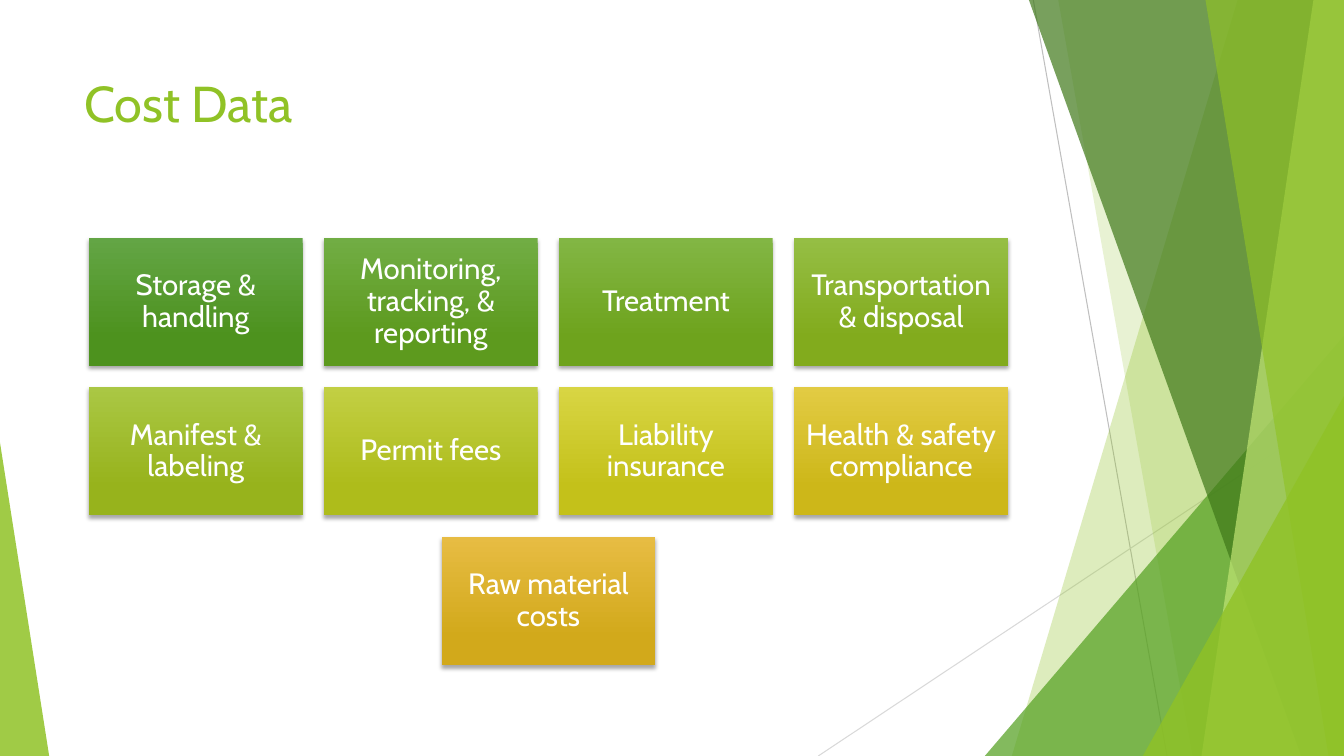
from lxml import etree
from pptx import Presentation
from pptx import util as u
from pptx.dml.color import RGBColor
from pptx.enum import shapes, text
from pptx.oxml.ns import qn

FONT = "Cabin"
GREEN = "90C226"
WHITE = "FFFFFF"
SLIDE_WIDTH, SLIDE_HEIGHT = 33.87, 19.05

CARDS = [
    [("Storage & handling", "63A545", "4D921E"),
     ("Monitoring, tracking, & reporting", "71AD44", "5D9A1E"),
     ("Treatment", "82B644", "6EA31D"),
     ("Transportation & disposal", "95BE44", "82AB1D")],
    [("Manifest & labeling", "AAC744", "97B31C"),
     ("Permit fees", "C2CF43", "AEBC1B"),
     ("Liability insurance", "D8D543", "C4C11A"),
     ("Health & safety compliance", "E2CB43", "CDB719")],
    [("Raw material costs", "E7BC43", "D2A91B")],
]

# Back to front: kind, first x, second x (beam) or top y (triangle), colour, opacity
FACETS = [
    ("beam", 10.57, 4.88, GREEN, 30),
    ("beam", 6.05, 9.43, GREEN, 20),
    ("triangle", 4.2, 8.46, "54A021", 72),
    ("beam", 5.31, 12.17, "3F7819", 70),
    ("beam", 12.48, 9.66, "C0E474", 70),
    ("beam", 9.76, 12.86, GREEN, 65),
    ("triangle", 8.18, 9.98, GREEN, 80),
]


def rgb(value):
    return RGBColor.from_string(value)


def add_alpha(color_element, opacity):
    etree.SubElement(color_element, qn("a:alpha"), val=str(opacity * 1000))


def style_facet(shape, color, opacity):
    shape.shadow.inherit = False
    shape.fill.solid()
    shape.fill.fore_color.rgb = rgb(color)
    add_alpha(next(shape._element.spPr.iter(qn("a:srgbClr"))), opacity)
    shape.line.fill.background()


def add_triangle(slide, left, top, width, height, apex, color, opacity):
    shape = slide.shapes.add_shape(
        shapes.MSO_SHAPE.ISOSCELES_TRIANGLE,
        u.Cm(left), u.Cm(top), u.Cm(width), u.Cm(height))
    shape.adjustments[0] = apex
    style_facet(shape, color, opacity)


def add_beam(slide, points, color, opacity):
    start, *others = [(u.Cm(x), u.Cm(y)) for x, y in points]
    builder = slide.shapes.build_freeform(*start)
    builder.add_line_segments(others, close=True)
    style_facet(builder.convert_to_shape(), color, opacity)


def add_hairline(slide, start, end, color):
    line = slide.shapes.add_connector(
        shapes.MSO_CONNECTOR.STRAIGHT, *[u.Cm(value) for value in (*start, *end)])
    line.line.color.rgb = rgb(color)
    line.line.width = u.Pt(0.75)
    etree.SubElement(line._element.spPr, qn("a:effectLst"))


def add_facets(slide, left, top, width, height):
    """Overlapping translucent panels along the right edge."""
    right, bottom = left + width, top + height
    add_hairline(slide, (left + 5.42, top), (left + 8.79, bottom), "BFBFBF")
    add_hairline(slide, (right, top + 10.24), (left, bottom), "D9D9D9")
    for kind, first, second, color, opacity in FACETS:
        if kind == "beam":
            points = [(left + first, top), (right, top),
                      (right, bottom), (left + second, bottom)]
            add_beam(slide, points, color, opacity)
        else:
            add_triangle(slide, left + first, top + second,
                         width - first, height - second, 1, color, opacity)


def add_title(slide, left, top, width, height, wording):
    box = slide.shapes.add_textbox(u.Cm(left), u.Cm(top), u.Cm(width), u.Cm(height))
    frame = box.text_frame
    frame.word_wrap = True
    frame.vertical_anchor = text.MSO_ANCHOR.TOP
    paragraph = frame.paragraphs[0]
    paragraph.text = wording
    paragraph.font.name = FONT
    paragraph.font.size = u.Pt(36)
    paragraph.font.color.rgb = rgb(GREEN)


def add_card(slide, left, top, width, height, wording, light, dark):
    card = slide.shapes.add_shape(
        shapes.MSO_SHAPE.RECTANGLE, u.Cm(left), u.Cm(top), u.Cm(width), u.Cm(height))
    card.line.fill.background()

    # Gradient from light at the top to dark near the bottom
    card.fill.gradient()
    card.fill.gradient_angle = 270
    for stop, color, position in zip(card.fill.gradient_stops, (light, dark), (0, 0.78)):
        stop.color.rgb = rgb(color)
        stop.position = position

    # Soft shadow below
    card.shadow.inherit = False
    effects = card._element.spPr.find(qn("a:effectLst"))
    shadow = etree.SubElement(
        effects, qn("a:outerShdw"), blurRad=str(u.Pt(3)), dist=str(u.Pt(2)),
        dir="5400000", rotWithShape="0")
    add_alpha(etree.SubElement(shadow, qn("a:srgbClr"), val="000000"), 35)

    # Label
    frame = card.text_frame
    frame.word_wrap = True
    frame.vertical_anchor = text.MSO_ANCHOR.MIDDLE
    frame.margin_left = frame.margin_right = u.Cm(0.22)
    frame.margin_top = frame.margin_bottom = u.Cm(0.22)
    paragraph = frame.paragraphs[0]
    paragraph.text = wording
    paragraph.alignment = text.PP_ALIGN.CENTER
    paragraph.line_spacing = 0.9
    paragraph.font.name = FONT
    paragraph.font.size = u.Pt(21)
    paragraph.font.color.rgb = rgb(WHITE)


def add_card_grid(slide, left, top, width, height, gap=0.54):
    """Rows of equal cards; a shorter row is centred."""
    columns = max(len(row) for row in CARDS)
    card_width = (width - gap * (columns - 1)) / columns
    card_height = (height - gap * (len(CARDS) - 1)) / len(CARDS)
    for row_index, row in enumerate(CARDS):
        indent = (columns - len(row)) * (card_width + gap) / 2
        for column, card in enumerate(row):
            add_card(slide, left + indent + column * (card_width + gap),
                     top + row_index * (card_height + gap),
                     card_width, card_height, *card)


def main():
    presentation = Presentation()
    presentation.slide_width = u.Cm(SLIDE_WIDTH)
    presentation.slide_height = u.Cm(SLIDE_HEIGHT)
    slide = presentation.slides.add_slide(presentation.slide_layouts[6])

    # Decoration
    add_facets(slide, 20.62, 0, SLIDE_WIDTH - 20.62, SLIDE_HEIGHT)
    add_triangle(slide, 0, 11.15, 1.24, SLIDE_HEIGHT - 11.15, 0, GREEN, 85)

    # Content
    add_title(slide, 1.88, 1.7, 23.88, 3.66, "Cost Data")
    add_card_grid(slide, 2.24, 5.99, 23.16, 10.77)

    presentation.save("out.pptx")


if __name__ == "__main__":
    main()
